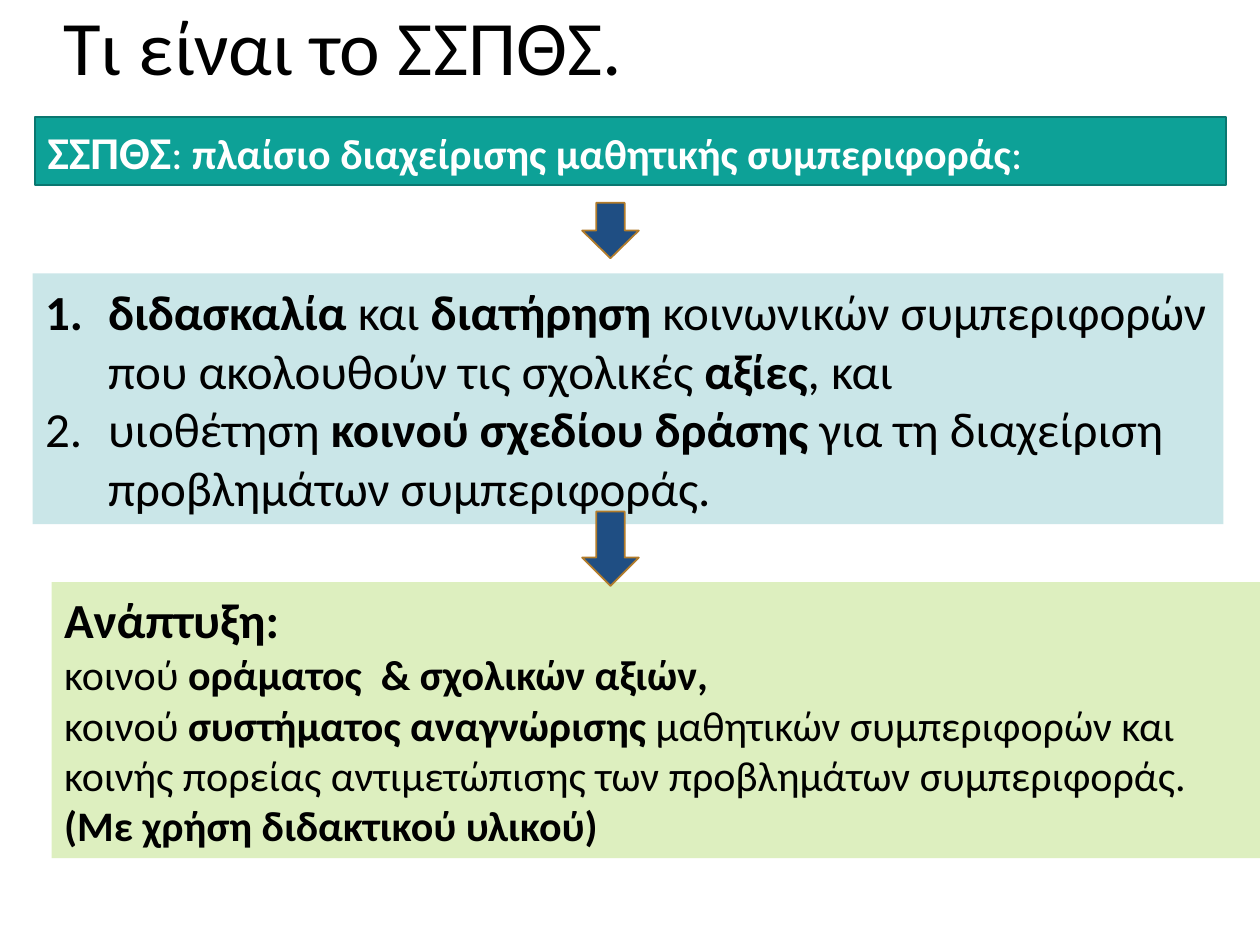
from lxml import etree
from pptx import Presentation
from pptx.dml.color import RGBColor
from pptx.enum.shapes import MSO_SHAPE
from pptx.enum.text import MSO_ANCHOR, MSO_AUTO_SIZE, PP_ALIGN
from pptx.oxml.ns import qn
from pptx.util import Inches, Pt

RECTANGLE = MSO_SHAPE.RECTANGLE
DOWN_ARROW = MSO_SHAPE.DOWN_ARROW
LEFT = PP_ALIGN.LEFT
MIDDLE = MSO_ANCHOR.MIDDLE
GROW = MSO_AUTO_SIZE.SHAPE_TO_FIT_TEXT

FONT = "Calibri"
COLORS = {
    "black": "000000",
    "white": "FFFFFF",
    "teal": "0DA197",
    "teal_line": "0A7770",
    "pale_blue": "CAE6E8",
    "pale_green": "DDEFBF",
    "arrow": "1F4E83",
    "arrow_line": "B27C2B",
}


def color(name):
    return RGBColor.from_string(COLORS[name])


def add_block(page, kind, box, fill, line=None):
    shape = page.shapes.add_shape(kind, *(Inches(length) for length in box))
    shape.shadow.inherit = False
    shape.fill.solid()
    shape.fill.fore_color.rgb = color(fill)
    if line:
        shape.line.color.rgb = color(line)
        shape.line.width = Pt(1)
    else:
        shape.line.fill.background()
    return shape


def number_paragraph(para):
    properties = para._p.get_or_add_pPr()
    properties.set("marL", str(Inches(0.5)))
    properties.set("indent", str(-Inches(0.5)))
    etree.SubElement(properties, qn("a:buFont"), typeface="+mj-lt")
    etree.SubElement(properties, qn("a:buAutoNum"), type="arabicPeriod")


def write_paragraphs(shape, paragraphs, text_color, numbered=False):
    frame = shape.text_frame
    frame.word_wrap = True
    frame.auto_size = GROW
    for index, (size, spans) in enumerate(paragraphs):
        para = frame.paragraphs[0] if index == 0 else frame.add_paragraph()
        if numbered:
            number_paragraph(para)
        para.alignment = LEFT
        para.font.name = FONT
        para.font.size = Pt(size)
        para.font.color.rgb = color(text_color)
        for text, bold in spans:
            span = para.add_run()
            span.text = text
            span.font.name = FONT
            span.font.size = Pt(size)
            span.font.bold = bold
            span.font.color.rgb = color(text_color)


def place_title(page, box):
    title = page.shapes.title
    title.left, title.top, title.width, title.height = (Inches(length) for length in box)
    frame = title.text_frame
    frame.text = "Τι είναι το ΣΣΠΘΣ."
    frame.vertical_anchor = MIDDLE
    frame.margin_left, frame.margin_right = Inches(0.5), Inches(0.16)
    frame.margin_top = frame.margin_bottom = Inches(0.06)
    para = frame.paragraphs[0]
    para.alignment = LEFT
    para.line_spacing = 0.9
    para.font.name = FONT
    para.font.size = Pt(44)
    para.font.color.rgb = color("black")


def place_definition(page, box):
    banner = add_block(page, RECTANGLE, box, "teal", "teal_line")
    write_paragraphs(banner, [
        (24, [("ΣΣΠΘΣ", True), (": ", False),
              ("πλαίσιο διαχείρισης μαθητικής συμπεριφοράς", True), (":", False)]),
    ], "white")
    banner.text_frame.paragraphs[0].runs[0].font.size = Pt(26)


def place_goals(page, box):
    goals = add_block(page, RECTANGLE, box, "pale_blue")
    write_paragraphs(goals, [
        (28, [("διδασκαλία", True), (" και ", False), ("διατήρηση", True),
              (" κοινωνικών συμπεριφορών που ακολουθούν τις σχολικές ", False),
              ("αξίες", True), (", και", False)]),
        (28, [("υιοθέτηση ", False), ("κοινού σχεδίου δράσης ", True),
              ("για τη διαχείριση προβλημάτων συμπεριφοράς.", False)]),
    ], "black", numbered=True)


def place_development(page, box):
    development = add_block(page, RECTANGLE, box, "pale_green")
    write_paragraphs(development, [
        (28, [("Ανάπτυξη:", True)]),
        (24, [("κοινού ", False), ("οράματος  & σχολικών αξιών,", True)]),
        (24, [("κοινού ", False), ("συστήματος αναγνώρισης ", True),
              ("μαθητικών συμπεριφορών και κοινής πορείας αντιμετώπισης "
               "των προβλημάτων συμπεριφοράς. ", False),
              ("(Με χρήση διδακτικού υλικού)", True)]),
    ], "black")


def main():
    deck = Presentation()
    deck.slide_width, deck.slide_height = Inches(10), Inches(7.5)
    page = deck.slides.add_slide(deck.slide_layouts[5])
    place_title(page, (0, -0.01, 10, 0.82))
    place_definition(page, (0.28, 0.93, 9.45, 0.54))
    place_goals(page, (0.26, 2.17, 9.45, 1.99))
    place_development(page, (0.41, 4.62, 9.59, 2.19))
    for top, height in ((1.61, 0.44), (4.06, 0.59)):
        add_block(page, DOWN_ARROW, (4.62, top, 0.45, height), "arrow", "arrow_line")
    deck.save("out.pptx")


if __name__ == "__main__":
    main()
